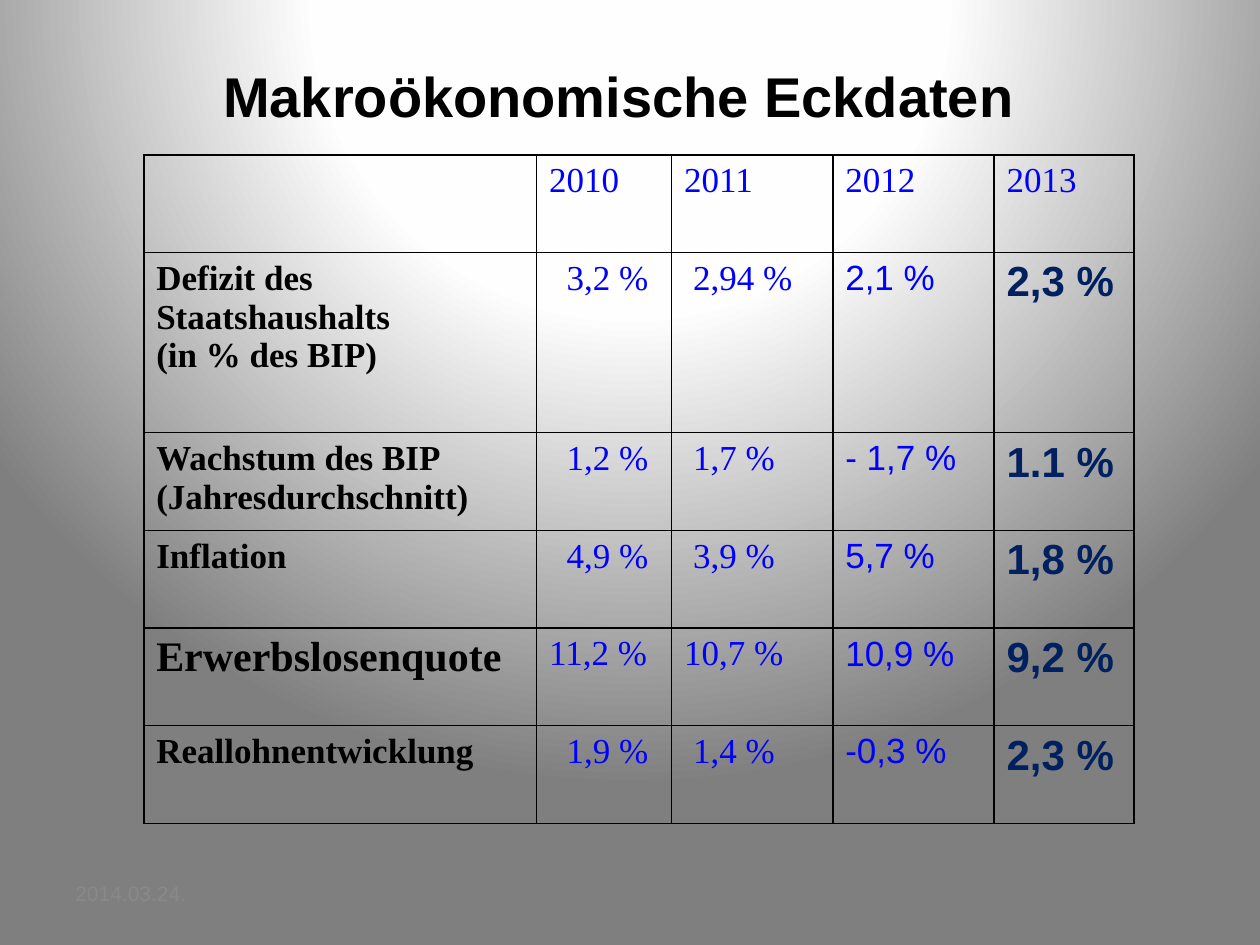
from lxml.etree import SubElement
from pptx import Presentation
from pptx.dml.color import RGBColor
from pptx.enum.text import MSO_ANCHOR, PP_ALIGN
from pptx.oxml import parse_xml
from pptx.oxml.ns import nsdecls, qn
from pptx.util import Cm, Pt

BLACK = RGBColor(0x00, 0x00, 0x00)
BLUE = RGBColor(0x00, 0x00, 0xFF)
NAVY = RGBColor(0x00, 0x20, 0x60)
GREY = RGBColor(0x89, 0x89, 0x89)
GLOW = [(0, "FFFFFF"), (40, "FEFEFE"), (100, "7F7F7F")]
SANS, SERIF = "Arial", "Times New Roman"

YEARS = ["2010", "2011", "2012", "2013"]
INDICATORS = [
    ("Defizit des Staatshaushalts\n(in % des BIP)", "3,2 %", "2,94 %", "2,1 %", "2,3 %"),
    ("Wachstum des BIP\n(Jahresdurchschnitt)", "1,2 %", "1,7 %", "- 1,7 %", "1.1 %"),
    ("Inflation", "4,9 %", "3,9 %", "5,7 %", "1,8 %"),
    ("Erwerbslosenquote", "11,2 %", "10,7 %", "10,9 %", "9,2 %"),
    ("Reallohnentwicklung", "1,9 %", "1,4 %", "-0,3 %", "2,3 %"),
]
HIGHLIGHT = "Erwerbslosenquote"
COLUMN_WIDTHS = [7.92, 2.72, 3.25, 3.25, 2.82]
ROW_HEIGHTS = [1.97, 3.63, 1.97, 1.97, 1.97, 1.97]
# Font, size, bold, colour and extra indent of each column
COLUMN_STYLES = [
    (SERIF, 20, True, BLACK, 0),
    (SERIF, 20, False, BLUE, 0.35),
    (SERIF, 20, False, BLUE, 0.18),
    (SANS, 20, False, BLUE, 0),
    (SANS, 24, True, NAVY, 0),
]


class SlideBuilder:
    """Holds the style and the current slide."""

    margin_x, margin_y = 0.25, 0.13

    def __init__(self, slide):
        self.slide = slide

    def background(self, stops):
        fill = self.slide.background.fill
        fill.solid()
        properties = self.slide.element.find(".//" + qn("p:bgPr"))
        stop_xml = "".join(
            f'<a:gs pos="{pos * 1000}"><a:srgbClr val="{color}"/></a:gs>'
            for pos, color in stops)
        gradient = parse_xml(
            f'<a:gradFill {nsdecls("a")} rotWithShape="1"><a:gsLst>{stop_xml}</a:gsLst>'
            '<a:path path="circle">'
            '<a:fillToRect l="50000" t="-80000" r="50000" b="180000"/>'
            '</a:path></a:gradFill>')
        properties.replace(properties[0], gradient)

    def format(self, frame, font, size, bold, color, align=PP_ALIGN.LEFT):
        for paragraph in frame.paragraphs:
            paragraph.alignment = align
            for run in paragraph.runs:
                run.font.name = font
                run.font.size = Pt(size)
                run.font.bold = bold
                run.font.color.rgb = color

    def text(self, words, box, style, align=PP_ALIGN.LEFT, extra_right=0, extra_bottom=0):
        frame = self.slide.shapes.add_textbox(*map(Cm, box)).text_frame
        frame.word_wrap = True
        frame.vertical_anchor = MSO_ANCHOR.MIDDLE
        frame.margin_right = Cm(self.margin_x + extra_right)
        frame.margin_bottom = Cm(self.margin_y + extra_bottom)
        frame.text = words
        self.format(frame, *style, align)

    def table(self, left, top, widths, heights):
        grid = self.slide.shapes.add_table(
            len(heights), len(widths), Cm(left), Cm(top),
            Cm(sum(widths)), Cm(sum(heights))).table
        grid.first_row = grid.horz_banding = False
        for column, width in zip(grid.columns, widths):
            column.width = Cm(width)
        for row, height in zip(grid.rows, heights):
            row.height = Cm(height)
        return grid

    def cell(self, cell, words, style, indent=0):
        cell.text = words
        cell.margin_left = Cm(self.margin_x + indent)
        cell.margin_right = Cm(self.margin_x)
        cell.margin_top = cell.margin_bottom = Cm(self.margin_y)
        self.format(cell.text_frame, *style)
        self.borders(cell)
        cell.fill.background()

    def borders(self, cell):
        properties = cell._tc.get_or_add_tcPr()
        for side in ("a:lnL", "a:lnR", "a:lnT", "a:lnB"):
            line = SubElement(properties, qn(side), w=str(Pt(1)))
            fill = SubElement(line, qn("a:solidFill"))
            SubElement(fill, qn("a:srgbClr"), val=str(BLACK))


def main():
    deck = Presentation()
    deck.slide_width, deck.slide_height = Cm(25.4), Cm(19.05)
    builder = SlideBuilder(deck.slides.add_slide(deck.slide_layouts[6]))
    builder.background(GLOW)

    # Title
    builder.text("Makroökonomische Eckdaten", (1.27, 0.76, 22.86, 3.18),
                 (SANS, 32, True, BLACK), PP_ALIGN.CENTER,
                 extra_right=0.45, extra_bottom=0.85)

    # Key figures
    figures = builder.table(2.9, 3.12, COLUMN_WIDTHS, ROW_HEIGHTS)
    for column, year in enumerate(["", *YEARS]):
        builder.cell(figures.cell(0, column), year, (SERIF, 20, False, BLUE))
    for row, indicator in enumerate(INDICATORS, start=1):
        highlighted = indicator[0] == HIGHLIGHT
        for column, words in enumerate(indicator):
            font, size, bold, color, indent = COLUMN_STYLES[column]
            if highlighted:
                indent = 0
                size = 24 if column == 0 else size
            builder.cell(figures.cell(row, column), words,
                         (font, size, bold, color), indent)

    # Date
    builder.text("2014.03.24.", (1.27, 17.5, 5.93, 1.01), (SANS, 12, False, GREY))

    deck.save("out.pptx")


if __name__ == "__main__":
    main()
